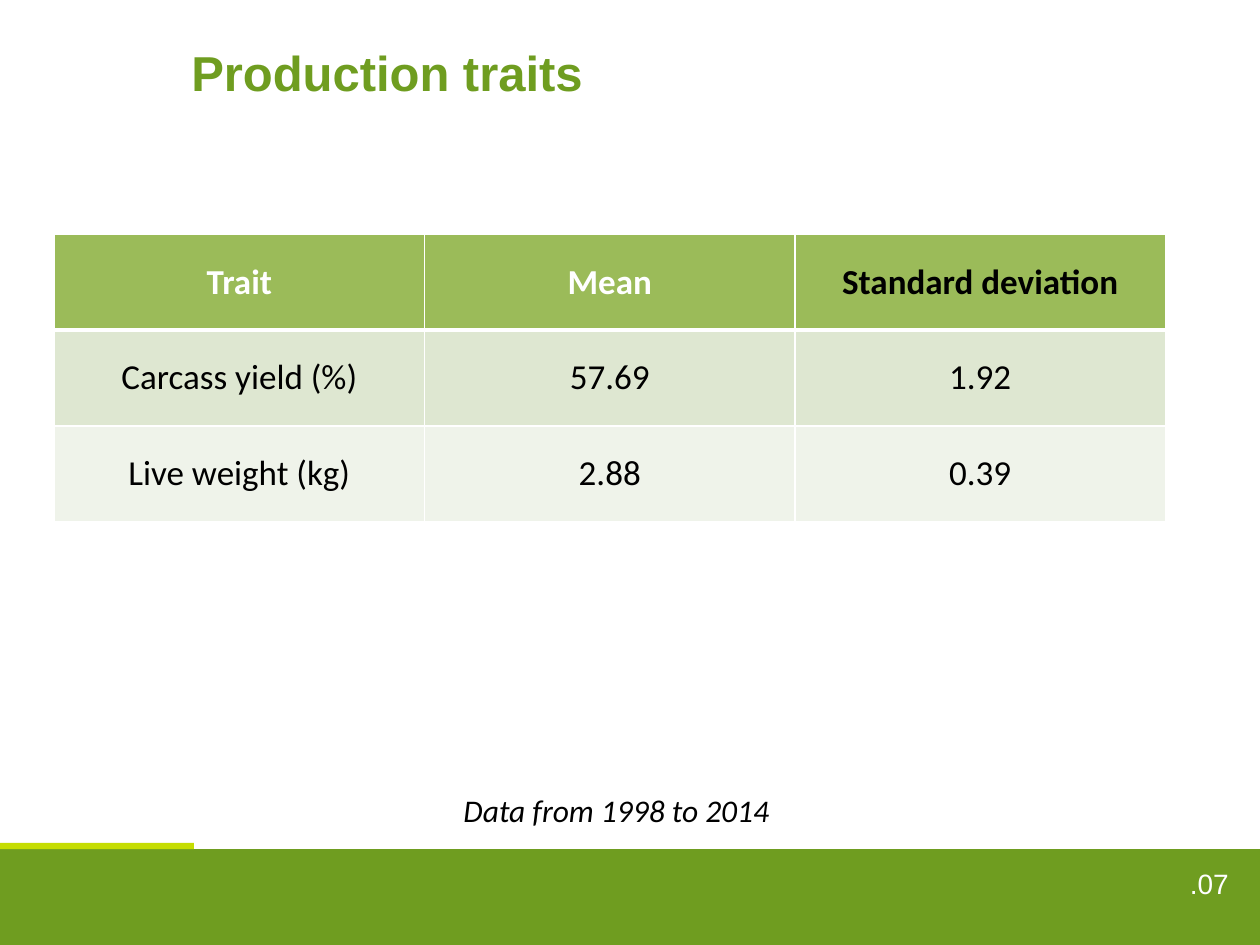
"""Build the production traits slide with its summary table."""
from dataclasses import dataclass

from lxml import etree
from pptx import Presentation
from pptx import util as u
from pptx.dml.color import RGBColor
from pptx.enum import shapes, text
from pptx.oxml.ns import qn


@dataclass(frozen=True)
class Theme:
    white: str = "FFFFFF"
    black: str = "000000"
    green: str = "6F9D20"
    lime: str = "C5DD01"
    header: str = "9BBB59"
    bands: tuple[str, ...] = ("DEE7D1", "EFF3EA")
    heading_font: str = "Arial"
    body_font: str = "Calibri"
    title_size: int = 28
    table_size: int = 20
    caption_size: int = 18
    page_size: int = 16
    rule: int = 1
    header_rule: int = 3


@dataclass(frozen=True)
class Box:
    left: float
    top: float
    width: float
    height: float

    def lengths(self) -> tuple[u.Length, ...]:
        return tuple(u.Inches(v) for v in (self.left, self.top, self.width, self.height))


@dataclass(frozen=True)
class Bar:
    box: Box
    color: str


THEME = Theme()
BARS = (
    Bar(Box(0, 6.74, 10, 0.76), THEME.green),
    Bar(Box(0, 6.69, 1.54, 0.05), THEME.lime),
    Bar(Box(1.42, 0.29, 7.4, 0.57), THEME.white),
)
TRAITS = (
    ("Trait", "Mean", "Standard deviation"),
    ("Carcass yield (%)", "57.69", "1.92"),
    ("Live weight (kg)", "2.88", "0.39"),
)


def write(frame, words: str, *, size: int, color: str, font: str = THEME.body_font,
          bold: bool = False, italic: bool = False,
          align: text.PP_ALIGN = text.PP_ALIGN.LEFT) -> None:
    """Put one formatted line into a text frame."""
    frame.word_wrap = True
    line = frame.paragraphs[0]
    line.alignment = align
    run = line.add_run()
    run.text = words
    run.font.name, run.font.size = font, u.Pt(size)
    run.font.bold, run.font.italic = bold, italic
    run.font.color.rgb = RGBColor.from_string(color)


def draw_bar(slide, bar: Bar):
    """Draw a plain filled rectangle."""
    strip = slide.shapes.add_shape(shapes.MSO_SHAPE.RECTANGLE, *bar.box.lengths())
    strip.shadow.inherit = False
    strip.fill.solid()
    strip.fill.fore_color.rgb = RGBColor.from_string(bar.color)
    strip.line.fill.background()
    return strip


def draw_label(slide, box: Box, words: str, **style) -> None:
    """Draw a text box with one line."""
    write(slide.shapes.add_textbox(*box.lengths()).text_frame, words, **style)


def rule_cell(cell, top: int, bottom: int) -> None:
    """Give a cell white borders, with widths in points."""
    properties = cell._tc.get_or_add_tcPr()
    widths = {"a:lnL": THEME.rule, "a:lnR": THEME.rule, "a:lnT": top, "a:lnB": bottom}
    for side, width in widths.items():
        edge = etree.SubElement(properties, qn(side), w=str(u.Pt(width)))
        paint = etree.SubElement(edge, qn("a:solidFill"))
        etree.SubElement(paint, qn("a:srgbClr"), val=THEME.white)


def draw_traits(slide, box: Box) -> None:
    """Draw the trait table with a header and banded rows."""
    table = slide.shapes.add_table(len(TRAITS), len(TRAITS[0]), *box.lengths()).table
    fills = (THEME.header, *THEME.bands)
    for r, (values, fill) in enumerate(zip(TRAITS, fills)):
        for c, value in enumerate(values):
            cell = table.cell(r, c)
            rule_cell(cell, top=THEME.header_rule if r == 1 else THEME.rule,
                      bottom=THEME.header_rule if r == 0 else THEME.rule)
            cell.fill.solid()
            cell.fill.fore_color.rgb = RGBColor.from_string(fill)
            cell.vertical_anchor = text.MSO_ANCHOR.MIDDLE
            write(cell.text_frame, value, size=THEME.table_size, bold=r == 0,
                  color=THEME.white if r == 0 and c < 2 else THEME.black,
                  align=text.PP_ALIGN.CENTER)


def main() -> None:
    """Assemble and save the slide."""
    deck = Presentation()
    deck.slide_width, deck.slide_height = u.Inches(10), u.Inches(7.5)
    slide = deck.slides.add_slide(deck.slide_layouts[6])
    footer, accent, title = (draw_bar(slide, bar) for bar in BARS)
    title.text_frame.vertical_anchor = text.MSO_ANCHOR.TOP
    write(title.text_frame, "Production traits", size=THEME.title_size,
          color=THEME.green, font=THEME.heading_font, bold=True)
    draw_label(slide, Box(8.62, 6.83, 1.23, 0.27), ".07", size=THEME.page_size,
               color=THEME.white, font=THEME.heading_font, align=text.PP_ALIGN.RIGHT)
    draw_traits(slide, Box(0.43, 1.86, 8.82, 2.28))
    draw_label(slide, Box(3.58, 6.23, 3.09, 0.4), "Data from 1998 to 2014",
               size=THEME.caption_size, color=THEME.black, italic=True)
    deck.save("out.pptx")


if __name__ == "__main__":
    main()
